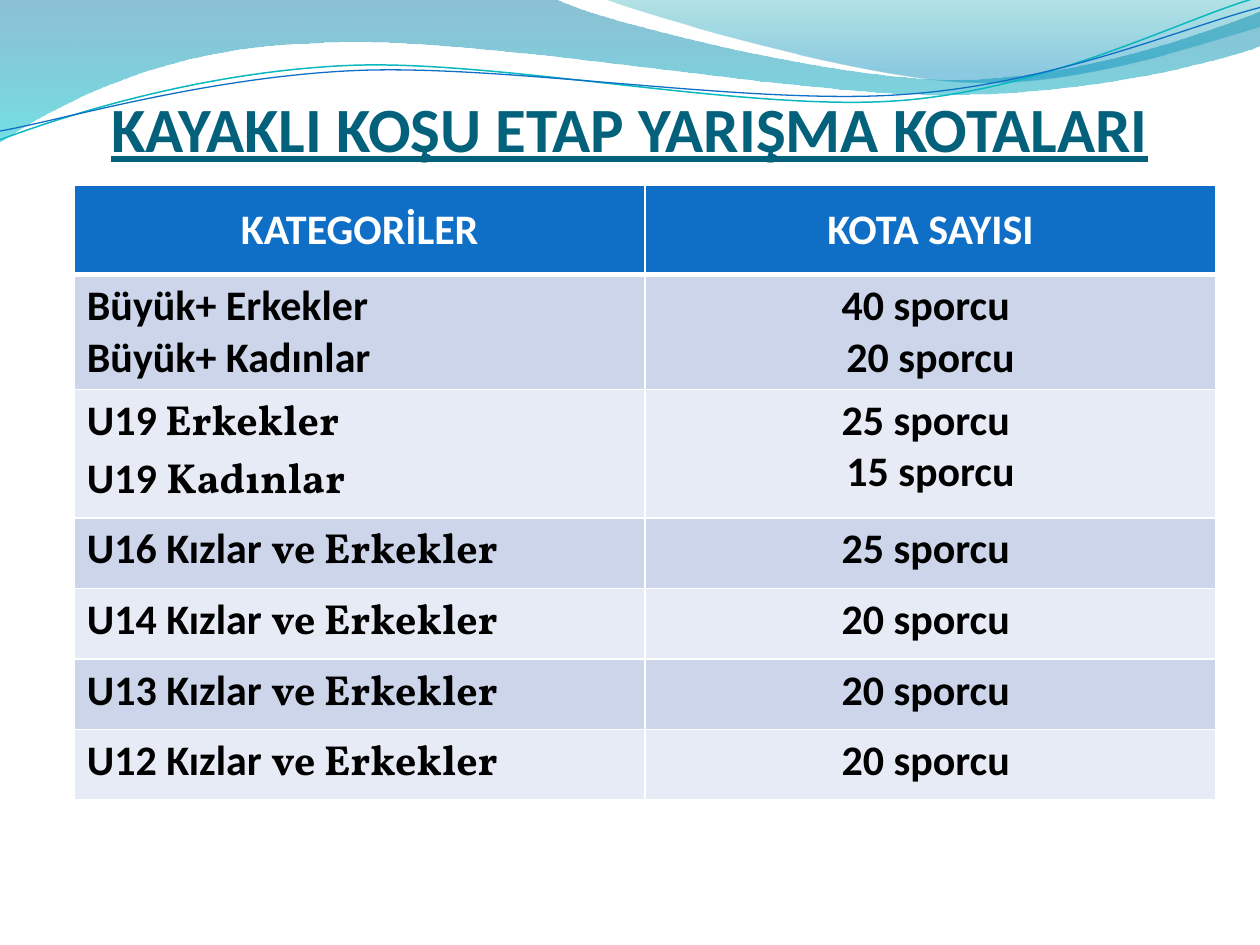
from lxml.etree import SubElement, fromstring
from pptx import Presentation
from pptx.dml.color import RGBColor
from pptx.enum.text import MSO_ANCHOR as Anchor, PP_ALIGN as Align
from pptx.oxml.ns import nsdecls, qn
from pptx.util import Inches, Pt

WHITE = RGBColor(0xFF, 0xFF, 0xFF)
BLACK = RGBColor(0x00, 0x00, 0x00)
TITLE_TEAL = RGBColor(0x04, 0x61, 0x7B)
BLUE = RGBColor(0x0F, 0x6F, 0xC6)
TURQUOISE = RGBColor(0x0A, 0xB8, 0xBF)
WAVE_BLUE = RGBColor(0x00, 0x74, 0xA1)
WAVE_CYAN = RGBColor(0x00, 0xC6, 0xCF)
CREST_TEAL = RGBColor(0x00, 0xA1, 0xA9)
CREST_BLUE = RGBColor(0x00, 0x8B, 0xBF)
BAND_DARK = RGBColor(0xCC, 0xD5, 0xEA)
BAND_LIGHT = RGBColor(0xE7, 0xEB, 0xF5)

SANS, SERIF = "Calibri", "Vollkorn"

WAVE = [(0, 0), (4.4, -0.01), (4.76, 0.17, 6.64, 0.63, 7.58, 0.63),
        (8.53, 0.63, 9.58, 0.26, 10, 0.09), (10.01, 0.36),
        (9.83, 0.44, 8.7, 0.76, 7.46, 0.75), (6.22, 0.75, 3.82, 0.28, 2.57, 0.34),
        (1.29, 0.36, 0.46, 0.83, -0.01, 1.13), (0, 0)]
CREST = [(4.79, -0.01), (5.09, 0.11, 6.82, 0.62, 7.69, 0.65),
         (8.56, 0.69, 9.61, 0.32, 10, 0.21), (10, 0), (4.79, -0.01)]
UPPER_STRAND = [(0, 1.11), (0.48, 0.93, 1.58, 0.57, 2.77, 0.52),
                (3.95, 0.47, 5.93, 0.89, 7.13, 0.8), (8.33, 0.71, 9.38, 0.15, 9.98, -0.02)]
LOWER_STRAND = [(0, 1.04), (0.47, 0.96, 1.64, 0.61, 2.83, 0.56),
                (4.03, 0.51, 5.97, 0.84, 7.17, 0.75), (8.36, 0.67, 9.41, 0.21, 10, 0.06)]

ROW_HEIGHTS = [0.71, 0.91, 1.02] + [0.56] * 4
QUOTAS = [
    ([[("Büyük+ Erkekler", SANS)], [("Büyük+ Kadınlar", SANS)]], ["40 sporcu ", "20 sporcu"]),
    ([[("U19", SANS), (" Erkekler", SERIF)], [("U19 ", SANS), ("Kadınlar", SERIF)]],
     ["25 sporcu ", "15 sporcu"]),
] + [([[(f"U{age} Kızlar ", SANS), ("ve Erkekler", SERIF)]], [f"{quota} sporcu "])
     for age, quota in [(16, 25), (14, 20), (13, 20), (12, 20)]]


def add_run(paragraph, text, size=24, font=SANS, color=BLACK, underline=None):
    run = paragraph.add_run()
    run.text = text
    run.font.size, run.font.name = Pt(size), font
    run.font.bold, run.font.underline = True, underline
    run.font.color.rgb = color


def bend(shape, segments):
    lines = iter(list(shape._element.iter(qn("a:lnTo"))))
    for segment in segments:
        first = next(lines)
        if len(segment) == 6:
            first.tag = qn("a:cubicBezTo")
            for line in (next(lines), next(lines)):
                first.append(line[0])
                line.getparent().remove(line)


class SlideBuilder:
    """Hold the slide and draw its waves, title and quota table."""

    def __init__(self, presentation):
        self.slide = presentation.slides.add_slide(presentation.slide_layouts[6])
        self.shapes = self.slide.shapes

    def outline(self, segments, close):
        points = [(Inches(segment[i]), Inches(segment[i + 1]))
                  for segment in segments for i in range(0, len(segment), 2)]
        builder = self.shapes.build_freeform(*points[0])
        builder.add_line_segments(points[1:], close=close)
        shape = builder.convert_to_shape()
        bend(shape, segments[1:])
        shape.shadow.inherit = False
        return shape

    def wave(self, segments, stops):
        shape = self.outline(segments, True)
        shape.line.fill.background()
        shape.fill.gradient()
        shape.fill.gradient_angle = 270
        for stop, (position, color, _) in zip(shape.fill.gradient_stops, stops):
            stop.position, stop.color.rgb = position, color
        colors = list(shape._element.spPr.iter(qn("a:srgbClr")))
        for color, (_, _, opacity) in zip(colors, stops):
            SubElement(color, qn("a:alpha"), val=str(opacity * 1000))

    def strand(self, segments, color, width):
        shape = self.outline(segments, False)
        shape.fill.background()
        shape.line.color.rgb, shape.line.width = color, Pt(width)

    def title(self, text, left, top, width, height):
        box = self.shapes.add_textbox(Inches(left), Inches(top), Inches(width), Inches(height))
        frame = box.text_frame
        frame.word_wrap, frame.vertical_anchor = True, Anchor.BOTTOM
        frame.margin_left = frame.margin_right = frame.margin_bottom = 0
        paragraph = frame.paragraphs[0]
        paragraph.alignment = Align.CENTER
        add_run(paragraph, text, size=36, color=TITLE_TEAL, underline=True)

    def cell(self, cell, lines, fill, align, color=BLACK, anchor=Anchor.TOP, top=1, bottom=1):
        cell.fill.solid()
        cell.fill.fore_color.rgb = fill
        cell.vertical_anchor = anchor
        frame = cell.text_frame
        for index, runs in enumerate(lines):
            paragraph = frame.add_paragraph() if index else frame.paragraphs[0]
            paragraph.alignment = align
            for text, font in runs:
                add_run(paragraph, text, font=font, color=color)
        properties = cell._tc.get_or_add_tcPr()
        for index, (side, width) in enumerate(zip("LRTB", (1, 1, top, bottom))):
            properties.insert(index, fromstring(
                f'<a:ln{side} {nsdecls("a")} w="{Pt(width)}"><a:solidFill>'
                f'<a:srgbClr val="{WHITE}"/></a:solidFill></a:ln{side}>'))

    def quota_table(self, headers, quotas, left, top, width):
        table = self.shapes.add_table(len(ROW_HEIGHTS), len(headers), Inches(left), Inches(top),
                                      Inches(width), Inches(sum(ROW_HEIGHTS))).table
        for row, height in zip(table.rows, ROW_HEIGHTS):
            row.height = Inches(height)
        for column, header in enumerate(headers):
            self.cell(table.cell(0, column), [[(header, SANS)]], BLUE, Align.CENTER,
                      color=WHITE, anchor=Anchor.MIDDLE, bottom=3)
        for row, (categories, counts) in enumerate(quotas, start=1):
            fill = BAND_DARK if row % 2 else BAND_LIGHT
            edge = 3 if row == 1 else 1
            self.cell(table.cell(row, 0), categories, fill, Align.LEFT, top=edge)
            self.cell(table.cell(row, 1), [[(count, SANS)] for count in counts],
                      fill, Align.CENTER, top=edge)


def main():
    presentation = Presentation()
    presentation.slide_width, presentation.slide_height = Inches(10), Inches(7.5)
    builder = SlideBuilder(presentation)
    builder.wave(WAVE, [(0, WAVE_BLUE, 45), (1, WAVE_CYAN, 55)])
    builder.wave(CREST, [(0, CREST_TEAL, 30), (0.8, CREST_BLUE, 45)])
    builder.strand(UPPER_STRAND, TURQUOISE, 0.85)
    builder.strand(LOWER_STRAND, BLUE, 0.75)
    builder.title("KAYAKLI KOŞU ETAP YARIŞMA KOTALARI", 0.5, 0.44, 9, 0.87)
    builder.quota_table(["KATEGORİLER", "KOTA SAYISI"], QUOTAS, 0.59, 1.47, 9.06)
    presentation.save("out.pptx")


if __name__ == "__main__":
    main()
